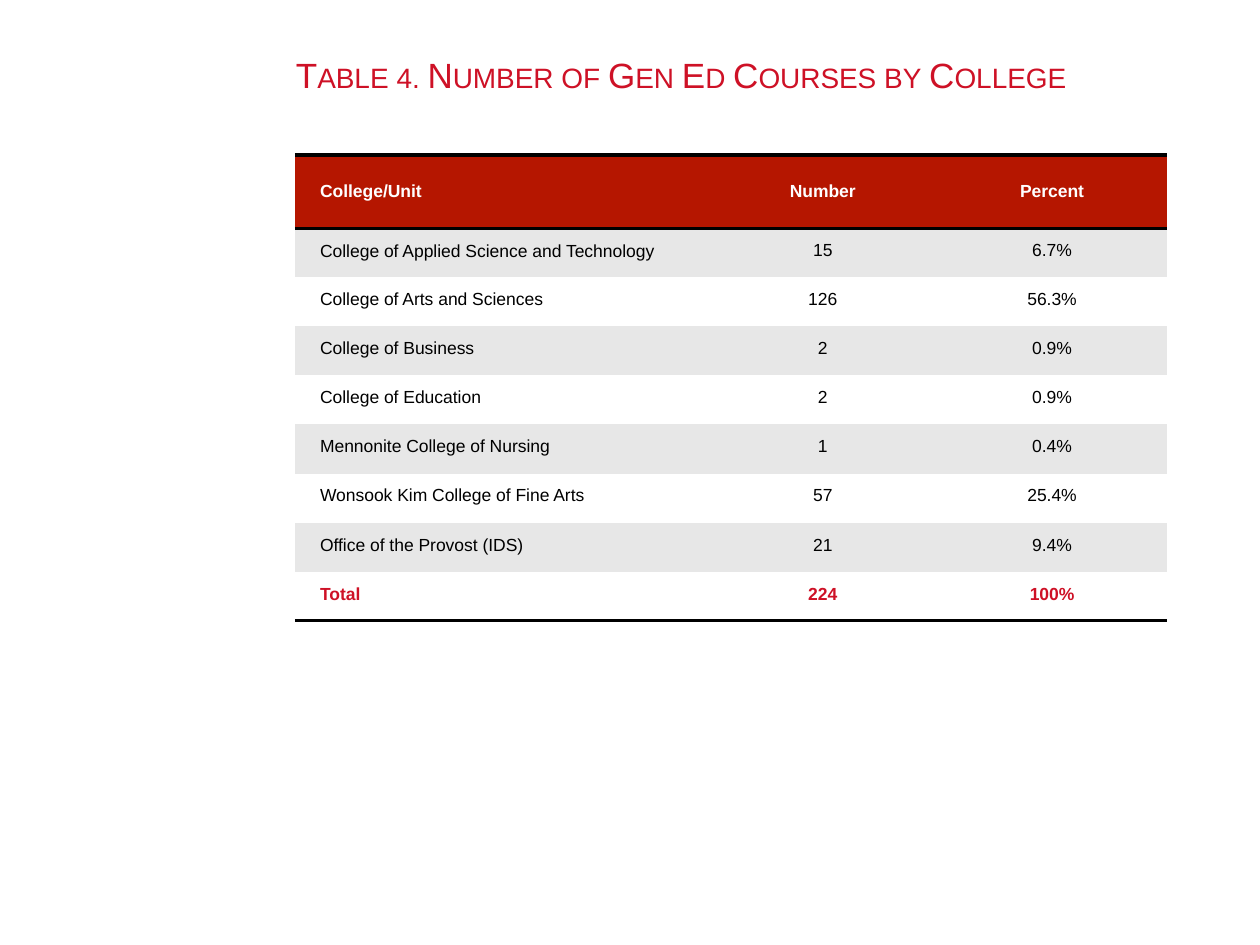
from lxml import etree
from pptx import Presentation
from pptx.dml.color import RGBColor
from pptx.enum.text import MSO_ANCHOR, PP_ALIGN
from pptx.oxml.ns import qn
from pptx.util import Inches, Pt

LEFT, CENTER = PP_ALIGN.LEFT, PP_ALIGN.CENTER
TOP, MIDDLE = MSO_ANCHOR.TOP, MSO_ANCHOR.MIDDLE
NO_STYLE = "{2D5ABB26-0587-4C30-8999-92F81FD0307C}"

# Content
TITLE = "Table 4. Number of Gen Ed Courses by College"
ROWS = [
    ("College/Unit", "Number", "Percent"),
    ("College of Applied Science and Technology", "15", "6.7%"),
    ("College of Arts and Sciences", "126", "56.3%"),
    ("College of Business", "2", "0.9%"),
    ("College of Education", "2", "0.9%"),
    ("Mennonite College of Nursing", "1", "0.4%"),
    ("Wonsook Kim College of Fine Arts", "57", "25.4%"),
    ("Office of the Provost (IDS)", "21", "9.4%"),
    ("Total", "224", "100%"),
]

# Look and layout, in inches
COLORS = {"red": "CE1126", "head": "B51600", "band": "E7E7E7",
          "white": "FFFFFF", "black": "000000"}
FONT = "Arial"
WIDE, HIGH = 10, 7.5
COLS = (3.28, 1.82, 1.82)
HEAD, BODY = 0.58, 0.39
LAST = len(ROWS) - 1


def rgb(name):
    return RGBColor.from_string(COLORS[name])


def put(frame, text, size=10, color="black", bold=False, align=LEFT,
        caps=False, space=None):
    para = frame.paragraphs[0]
    para.alignment = align
    para.line_spacing = space
    run = para.add_run()
    run.text = text
    font = run.font
    font.name, font.size, font.bold = FONT, Pt(size), bold
    font.color.rgb = rgb(color)
    if caps:
        run._r.get_or_add_rPr().set("cap", "small")


def rule(cell, sides):
    props = cell._tc.get_or_add_tcPr()
    for spot, side in enumerate(sides):
        line = etree.Element(qn(f"a:ln{side}"), w=str(Pt(2)))
        fill = etree.SubElement(line, qn("a:solidFill"))
        etree.SubElement(fill, qn("a:srgbClr"), val=COLORS["black"])
        props.insert(spot, line)


deck = Presentation()
deck.slide_width, deck.slide_height = Inches(WIDE), Inches(HIGH)
slide = deck.slides.add_slide(deck.slide_layouts[6])

# Title
box = slide.shapes.add_textbox(Inches(2.25), Inches(0.3),
                               Inches(7.25), Inches(0.58))
box.text_frame.word_wrap = True
box.text_frame.vertical_anchor = MIDDLE
put(box.text_frame, TITLE, size=20, color="red", caps=True)

# Table grid
table = slide.shapes.add_table(
    len(ROWS), len(COLS), Inches(2.34), Inches(1.23),
    Inches(sum(COLS)), Inches(HEAD + LAST * BODY)).table
table.first_row = table.horz_banding = False
table._tbl.tblPr.find(qn("a:tableStyleId")).text = NO_STYLE
for col, width in zip(table.columns, COLS):
    col.width = Inches(width)

# Cells: red header, striped body, ruled total
for r, row in enumerate(ROWS):
    head, total = r == 0, r == LAST
    table.rows[r].height = Inches(HEAD if head else BODY)
    back = "head" if head else "band" if r % 2 else "white"
    ink = "white" if head else "red" if total else "black"
    for c, text in enumerate(row):
        cell = table.cell(r, c)
        cell.margin_left = cell.margin_right = Inches(0.2)
        cell.margin_top = cell.margin_bottom = Inches(0.1)
        cell.vertical_anchor = MIDDLE if head else TOP
        cell.fill.solid()
        cell.fill.fore_color.rgb = rgb(back)
        rule(cell, "TB" if head else "B" if total else "")
        put(cell.text_frame, text, color=ink, bold=head or total,
            align=CENTER if c else LEFT,
            space=1.07 if (r, c) == (1, 0) else None)

deck.save("out.pptx")
